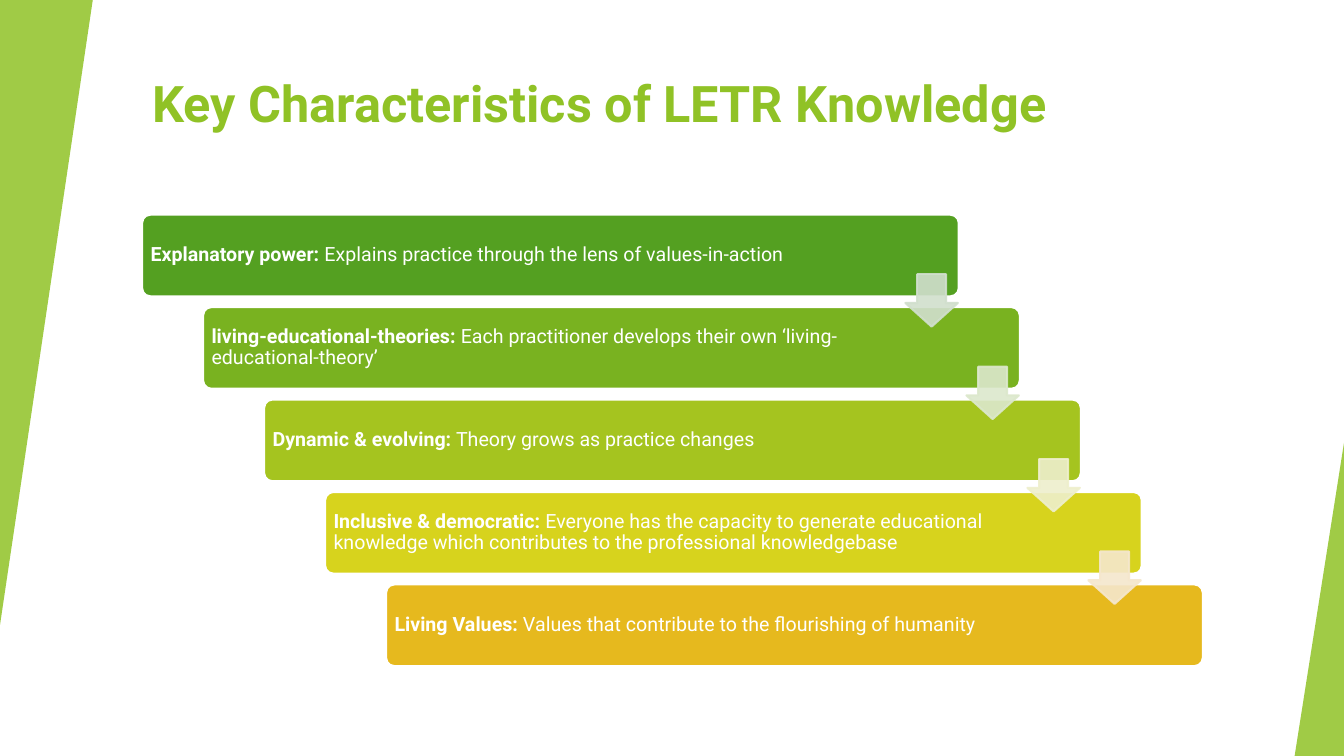
from pptx import Presentation
from pptx.dml.color import RGBColor
from pptx.enum import shapes, text
from pptx.oxml.ns import qn
from pptx.util import Inches, Pt
from lxml import etree

HUES = {
    "white": "FFFFFF", "lime": "90C226",
    "bars": ["54A021", "79B220", "A5C41F", "D7D31D", "E6B91E"],
    "arrows": ["D1DFCD", "DCE8CC", "EEEFCC", "F5E7CD"],
}
FONT = "Roboto"
TRAITS = [
    ("Explanatory power:", "Explains practice through the lens of values-in-action"),
    ("living-educational-theories:", "Each practitioner develops their own ‘living-educational-theory’"),
    ("Dynamic & evolving:", "Theory grows as practice changes"),
    ("Inclusive & democratic:", "Everyone has the capacity to generate educational "
     "knowledge which contributes to the professional knowledgebase"),
    ("Living Values:", "Values that contribute to the flourishing of humanity"),
]
STEP_X, STEP_Y = 0.605, 0.917

deck = Presentation()
deck.slide_width, deck.slide_height = Inches(13.33), Inches(7.5)
slide = deck.slides.add_slide(deck.slide_layouts[5])


def style(font, size, color, bold):
    font.name, font.size, font.bold = FONT, Pt(size), bold
    font.color.rgb = RGBColor.from_string(color)


def draw(kind, box, fill, adjust, line=None, alpha=100):
    shape = slide.shapes.add_shape(kind, *[Inches(n) for n in box])
    shape.shadow.inherit = False
    for k, part in enumerate(adjust):
        shape.adjustments[k] = part
    shape.fill.solid()
    shape.fill.fore_color.rgb = RGBColor.from_string(fill)
    if line:
        shape.line.color.rgb = RGBColor.from_string(line)
        shape.line.width = Pt(1.5)
    else:
        shape.line.fill.background()
    if alpha < 100:
        for color in shape._element.spPr.iter(qn("a:srgbClr")):
            etree.SubElement(color, qn("a:alpha")).set("val", str(alpha * 1000))
    return shape


title = slide.shapes.title
title.left, title.top = Inches(1.41), Inches(0.67)
title.width, title.height = Inches(11.15), Inches(1.2)
title.text_frame.text = "Key Characteristics of LETR Knowledge"
title.text_frame.vertical_anchor = text.MSO_ANCHOR.TOP
head = title.text_frame.paragraphs[0]
head.alignment = text.PP_ALIGN.LEFT
style(head.runs[0].font, 36, HUES["lime"], True)

for box, turn in [((0, 0, 0.92, 6.2), 180), ((12.84, 4.39, 0.49, 3.11), 0)]:
    wedge = draw(shapes.MSO_SHAPE.ISOSCELES_TRIANGLE, box, HUES["lime"], [1], alpha=85)
    wedge.rotation = turn

for i, (name, detail) in enumerate(TRAITS):
    box = (1.41 + i * STEP_X, 2.13 + i * STEP_Y, 8.1, 0.81)
    bar = draw(shapes.MSO_SHAPE.ROUNDED_RECTANGLE, box, HUES["bars"][i], [0.1], HUES["white"])
    frame = bar.text_frame
    frame.word_wrap = True
    frame.vertical_anchor = text.MSO_ANCHOR.MIDDLE
    frame.margin_left = frame.margin_top = frame.margin_bottom = Inches(0.06)
    frame.margin_right = Inches(1.18)
    para = frame.paragraphs[0]
    para.alignment = text.PP_ALIGN.LEFT
    para.line_spacing = 0.9
    for words, bold in [(name, True), (" " + detail, False)]:
        run = para.add_run()
        run.text = words
        style(run.font, 14, HUES["white"], bold)

for i, tint in enumerate(HUES["arrows"]):
    box = (8.98 + i * STEP_X, 2.72 + i * STEP_Y, 0.52, 0.52)
    draw(shapes.MSO_SHAPE.DOWN_ARROW, box, tint, [0.55, 0.45], tint, 90)

deck.save("out.pptx")
